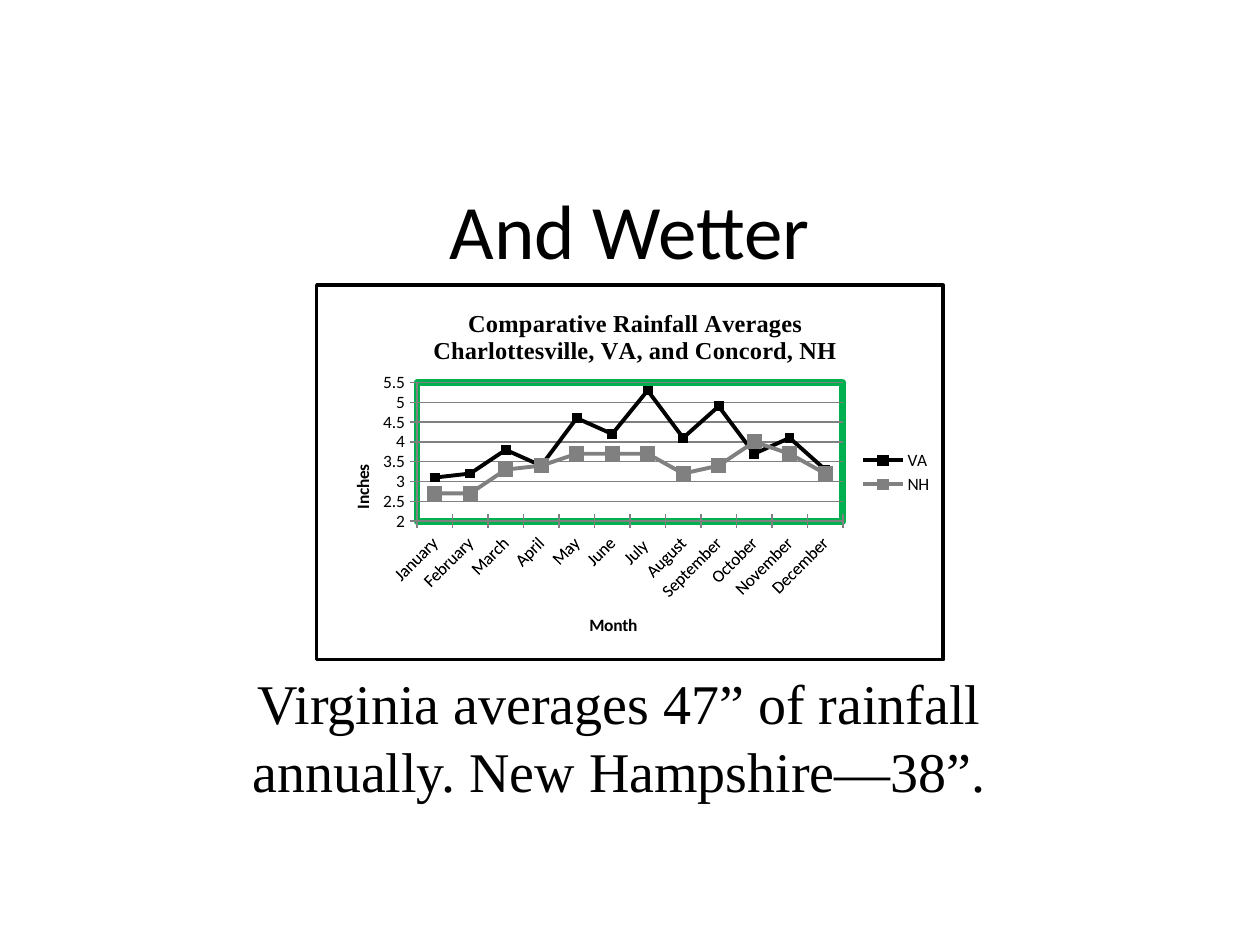
from dataclasses import dataclass

from lxml import etree
from pptx import Presentation
from pptx.chart.data import CategoryChartData
from pptx.dml.color import RGBColor
from pptx.enum.chart import XL_CHART_TYPE as ChartType
from pptx.enum.chart import XL_LEGEND_POSITION as LegendPosition
from pptx.enum.chart import XL_MARKER_STYLE as MarkerStyle
from pptx.enum.chart import XL_TICK_MARK as TickMark
from pptx.enum.text import MSO_ANCHOR as Anchor
from pptx.enum.text import PP_ALIGN as Align
from pptx.oxml import parse_xml
from pptx.oxml.ns import nsdecls, qn
from pptx.util import Pt

BLACK, GRAY, GREEN = "000000", "808080", "00B050"
SANS, SERIF = "Calibri", "Times New Roman"
MONTHS = ["January", "February", "March", "April", "May", "June", "July ",
          "August", "September", "October", "November", "December"]


@dataclass
class TextBlock:
    text: str
    box: tuple
    font: str
    size: float
    anchor: Anchor
    line_spacing: float


@dataclass
class RainSeries:
    name: str
    values: tuple
    color: str
    marker_size: int


TEXTS = [
    TextBlock("And Wetter", (54, 72, 612, 116), SANS, 44, Anchor.MIDDLE, 53.7),
    TextBlock("Virginia averages 47” of rainfall annually. New Hampshire—38”.",
              (102, 378, 504, 138), SERIF, 32, Anchor.TOP, 39),
]
RAINFALL = [
    RainSeries("VA", (3.1, 3.2, 3.8, 3.4, 4.6, 4.2, 5.3, 4.1, 4.9, 3.7, 4.1, 3.3), BLACK, 5),
    RainSeries("NH", (2.7, 2.7, 3.3, 3.4, 3.7, 3.7, 3.7, 3.2, 3.4, 4, 3.7, 3.2), GRAY, 8),
]


def rgb(color: str) -> RGBColor:
    return RGBColor.from_string(color)


def style_font(font, name: str, size: float, bold: bool = False) -> None:
    font.name, font.size, font.bold = name, Pt(size), bold
    font.color.rgb = rgb(BLACK)


def add_text(slide, block: TextBlock) -> None:
    shape = slide.shapes.add_textbox(*map(Pt, block.box))
    frame = shape.text_frame
    frame.word_wrap, frame.vertical_anchor = True, block.anchor
    paragraph = frame.paragraphs[0]
    paragraph.alignment = Align.CENTER
    paragraph.line_spacing = Pt(block.line_spacing)
    run = paragraph.add_run()
    run.text = block.text
    style_font(run.font, block.font, block.size)


def add_title(title, lines: list, font: str, size: float) -> None:
    frame = title.text_frame
    for index, line in enumerate(lines):
        paragraph = frame.add_paragraph() if index else frame.paragraphs[0]
        run = paragraph.add_run()
        run.text = line
        style_font(run.font, font, size, bold=True)


def place(element, index: int, inner: bool = False, **fractions: float) -> None:
    """Set a manual layout, in fractions of the chart area."""
    for old in element.findall(qn("c:layout")):
        element.remove(old)
    layout = etree.Element(qn("c:layout"))
    manual = etree.SubElement(layout, qn("c:manualLayout"))
    if inner:
        etree.SubElement(manual, qn("c:layoutTarget"), val="inner")
    for key in ("x", "y"):
        etree.SubElement(manual, qn(f"c:{key}Mode"), val="edge")
    for key, value in fractions.items():
        etree.SubElement(manual, qn(f"c:{key}"), val=str(value))
    element.insert(index, layout)


def frame_properties(color: str, width: float):
    return parse_xml(
        f'<c:spPr {nsdecls("c", "a")}><a:solidFill><a:srgbClr val="FFFFFF"/></a:solidFill>'
        f'<a:ln w="{Pt(width)}"><a:solidFill><a:srgbClr val="{color}"/></a:solidFill></a:ln></c:spPr>')


def style_axis(axis, title: str, x: float, y: float) -> None:
    axis.major_tick_mark = TickMark.CROSS
    axis.format.line.color.rgb = rgb(GRAY)
    axis.format.line.width = Pt(0.75)
    add_title(axis.axis_title, [title], SANS, 10)
    place(axis.axis_title._element, 1, x=x, y=y)


def style_series(series, rain: RainSeries) -> None:
    series.smooth = False
    series.format.line.color.rgb = rgb(rain.color)
    series.format.line.width = Pt(2.25)
    marker = series.marker
    marker.style, marker.size = MarkerStyle.SQUARE, rain.marker_size
    marker.format.fill.solid()
    marker.format.fill.fore_color.rgb = rgb(rain.color)
    marker.format.line.color.rgb = rgb(rain.color)


def add_rainfall_chart(slide) -> None:
    data = CategoryChartData()
    data.categories = MONTHS
    for rain in RAINFALL:
        data.add_series(rain.name, rain.values)
    chart = slide.shapes.add_chart(
        ChartType.LINE_MARKERS, Pt(180), Pt(162), Pt(360), Pt(216), data).chart
    style_font(chart.font, SANS, 10)
    chart.plots[0].vary_by_categories = False
    for series, rain in zip(chart.plots[0].series, RAINFALL):
        style_series(series, rain)

    # Title and legend
    add_title(chart.chart_title, ["Comparative Rainfall Averages",
                                  "Charlottesville, VA, and Concord, NH"], SERIF, 14)
    place(chart.chart_title._element, 1, x=0.18, y=0.05)
    chart.has_legend = True
    chart.legend.position = LegendPosition.RIGHT
    chart.legend.include_in_layout = False
    place(chart.legend._element, 1, x=0.86, y=0.43, w=0.13, h=0.14)

    # Axes
    months, inches = chart.category_axis, chart.value_axis
    style_axis(months, "Month", 0.43, 0.87)
    style_axis(inches, "Inches", 0.05, 0.47)
    months.tick_labels.font.size = Pt(10)
    months._element.find(qn("c:txPr")).find(qn("a:bodyPr")).set("rot", "-2700000")
    inches.minimum_scale, inches.maximum_scale, inches.major_unit = 2, 5.5, 0.5
    inches.tick_labels.number_format = "General"
    inches.tick_labels.number_format_is_linked = False
    inches.major_gridlines.format.line.color.rgb = rgb(GRAY)
    inches.major_gridlines.format.line.width = Pt(0.75)

    # Plot frame and outer border
    chart_space = chart._chartSpace
    plot_area = chart_space.chart.plotArea
    place(plot_area, 0, inner=True, x=0.16, y=0.26, w=0.68, h=0.37)
    plot_area.append(frame_properties(GREEN, 4))
    chart_space.find(qn("c:txPr")).addprevious(frame_properties(BLACK, 2))


def main() -> None:
    presentation = Presentation()
    presentation.slide_width, presentation.slide_height = Pt(720), Pt(540)
    slide = presentation.slides.add_slide(presentation.slide_layouts[6])
    for block in TEXTS:
        add_text(slide, block)
    add_rainfall_chart(slide)
    presentation.save("out.pptx")


if __name__ == "__main__":
    main()
